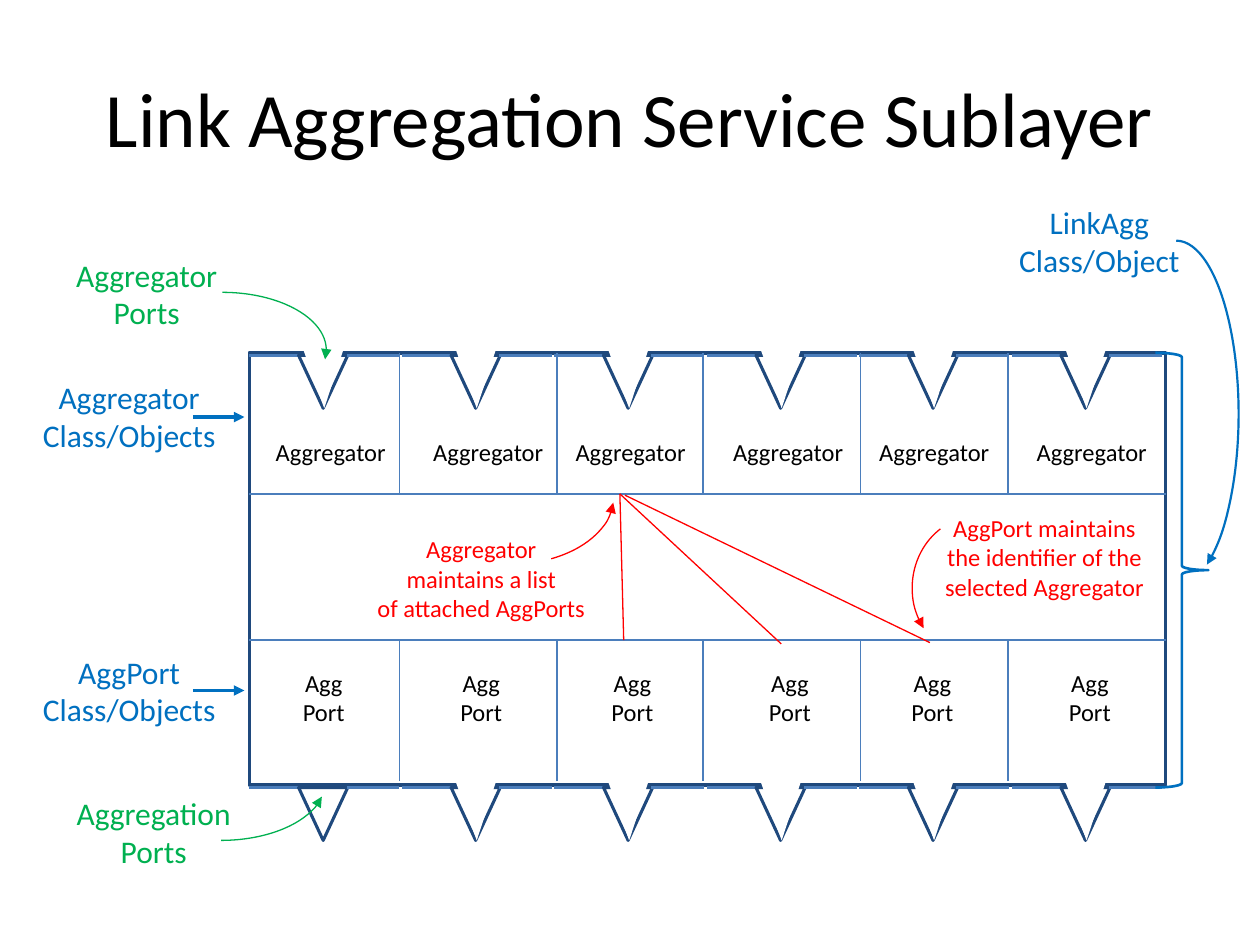
from dataclasses import dataclass

from lxml import etree
from pptx import Presentation
from pptx.dml.color import RGBColor
from pptx.enum.shapes import MSO_CONNECTOR, MSO_SHAPE
from pptx.enum.text import MSO_ANCHOR, MSO_AUTO_SIZE, PP_ALIGN
from pptx.oxml.ns import qn
from pptx.util import Inches, Pt

STRAIGHT = MSO_CONNECTOR.STRAIGHT
RECTANGLE, TRIANGLE = MSO_SHAPE.RECTANGLE, MSO_SHAPE.ISOSCELES_TRIANGLE
ARC, BRACE = MSO_SHAPE.ARC, MSO_SHAPE.RIGHT_BRACE
CENTER, MIDDLE = PP_ALIGN.CENTER, MSO_ANCHOR.MIDDLE
FIT_SHAPE = MSO_AUTO_SIZE.SHAPE_TO_FIT_TEXT


@dataclass(frozen=True)
class Theme:
    font: str = "Calibri"
    title_size: int = 44
    label_size: int = 18
    note_size: int = 14
    black: str = "000000"
    white: str = "FFFFFF"
    navy: str = "1F497D"
    steel: str = "4B7EBC"
    blue: str = "0070C0"
    green: str = "00B050"
    red: str = "FF0000"


THEME = Theme()

LEFT, RIGHT = 1.98, 9.25
TOP, BOTTOM = 2.8, 6.23
AGGREGATOR_FLOOR, AGGPORT_CEILING = 3.92, 5.08
DIVIDERS = [3.17, 4.42, 5.58, 6.83, 8]
AGGREGATOR_LEFTS = [2.08, 3.33, 4.46, 5.71, 6.87, 8.12]
AGGPORT_LEFTS = [2.3, 3.55, 4.75, 6, 7.13, 8.38]
PORT_COUNT, PORT_PITCH = 6, 1.21
PORT_WIDTH, PORT_DEPTH = 0.39, 0.42
AGGREGATOR_PORTS_Y, AGGREGATION_PORTS_Y = 2.82, 6.25


def style_text(frame, size, color):
    for paragraph in frame.paragraphs:
        paragraph.alignment = CENTER
        formats = {"name": THEME.font, "size": Pt(size),
                   "color.rgb": RGBColor.from_string(color)}
        paragraph.font.color.rgb = formats.pop("color.rgb")
        for attribute, value in formats.items():
            setattr(paragraph.font, attribute, value)


def add_label(slide, box, text, size, color, wrap=False):
    frame = slide.shapes.add_textbox(*map(Inches, box)).text_frame
    frame.text = text
    for attribute, value in {"word_wrap": wrap, "auto_size": FIT_SHAPE}.items():
        setattr(frame, attribute, value)
    style_text(frame, size, color)


def style_line(line, color, width, arrow=False):
    line.color.rgb = RGBColor.from_string(color)
    line.width = Pt(width)
    if arrow:
        etree.SubElement(line._get_or_add_ln(), qn("a:tailEnd"), type="triangle")


def add_line(shapes, start, end, color, width=0.75, arrow=False):
    line = shapes.add_connector(STRAIGHT, *map(Inches, (*start, *end)))
    style_line(line.line, color, width, arrow)
    etree.SubElement(line._element.spPr, qn("a:effectLst"))


def add_outline(shapes, kind, box, color, width, arrow=False):
    outline = shapes.add_shape(kind, *map(Inches, box))
    outline.shadow.inherit = False
    outline.fill.background()
    style_line(outline.line, color, width, arrow)
    return outline


def add_mask(shapes, box):
    """White triangle that opens the frame above a port notch."""
    mask = shapes.add_shape(TRIANGLE, *map(Inches, box))
    mask.shadow.inherit = False
    mask.fill.solid()
    mask.fill.fore_color.rgb = RGBColor.from_string(THEME.white)
    mask.line.fill.background()
    mask.adjustments[0] = 0.479
    mask.rotation = 180


def add_arc_arrow(slide, box, angles, color, width=0.75, flip=False, rotation=0):
    """Curved arrow; angles are in units of 5/3 degree, as the preset stores them."""
    arc = add_outline(slide.shapes, ARC, box, color, width, arrow=True)
    for index, angle in enumerate(angles):
        arc.adjustments[index] = angle
    arc.rotation = rotation
    if flip:
        arc._element.spPr.xfrm.set("flipV", "1")


def add_port_row(shapes, y, first_open):
    """Row of V-shaped ports, each between two short edge lines."""
    for index in range(PORT_COUNT):
        start = LEFT + index * PORT_PITCH
        port = start + PORT_WIDTH
        add_line(shapes, (start, y), (port, y), THEME.steel, 2)
        notch = add_outline(shapes, TRIANGLE, (port, y, PORT_WIDTH, PORT_DEPTH),
                            THEME.navy, 1.75)
        notch.rotation = 180
        add_line(shapes, (port + 0.38, y), (port + 0.8, y), THEME.steel, 2)
        if index or first_open:
            add_mask(shapes, (port, y - 0.15, PORT_WIDTH, 0.57))


def add_sublayer(slide):
    shapes = slide.shapes.add_group_shape().shapes
    add_outline(shapes, RECTANGLE, (LEFT, TOP, RIGHT - LEFT, BOTTOM - TOP),
                THEME.navy, 2)
    add_port_row(shapes, AGGREGATION_PORTS_Y, first_open=False)
    add_port_row(shapes, AGGREGATOR_PORTS_Y, first_open=True)


def add_cells(slide):
    for y in (AGGREGATOR_FLOOR, AGGPORT_CEILING):
        add_line(slide.shapes, (LEFT, y), (RIGHT, y), THEME.steel)
    for x in DIVIDERS:
        for low, high in ((AGGREGATOR_FLOOR, TOP), (6.2, AGGPORT_CEILING)):
            add_line(slide.shapes, (x, low), (x, high), THEME.steel)
    for x in AGGREGATOR_LEFTS:
        add_label(slide, (x, 3.42, 1.09, 0.34), "Aggregator",
                  THEME.note_size, THEME.black)
    for x in AGGPORT_LEFTS:
        add_label(slide, (x, 5.25, 0.54, 0.57), "Agg\nPort",
                  THEME.note_size, THEME.black)


def add_callouts(slide):
    for box, text, color in (
        ((0.5, 1.98, 1.33, 0.71), "Aggregator\nPorts", THEME.green),
        ((0.5, 6.25, 1.44, 0.71), "Aggregation\nPorts", THEME.green),
        ((7.98, 1.56, 1.49, 0.71), "LinkAgg\nClass/Object", THEME.blue),
        ((0.23, 2.95, 1.59, 0.71), "Aggregator\nClass/Objects", THEME.blue),
        ((0.23, 5.13, 1.59, 0.71), "AggPort\nClass/Objects", THEME.blue),
    ):
        add_label(slide, box, text, THEME.label_size, color)
    add_arc_arrow(slide, (0.94, 2.32, 1.65, 0.92), (162, 3.031), THEME.green)
    add_arc_arrow(slide, (0.93, 5.75, 1.65, 0.92), (162, 211.177), THEME.green,
                  flip=True)
    add_arc_arrow(slide, (8.84, 1.91, 0.99, 2.75), (162, 47.075), THEME.blue, 1.25)
    add_outline(slide.shapes, BRACE, (9.17, TOP, 0.42, 3.45), THEME.blue, 1.5)
    for y in (3.31, 5.48):
        add_line(slide.shapes, (1.53, y), (1.94, y), THEME.blue, 2, arrow=True)


def add_attachments(slide):
    for start, end in (((4.96, 3.93), (7.38, 5.1)),
                       ((4.92, 3.92), (6.2, 5.11)),
                       ((4.92, 3.92), (4.95, 5.08))):
        add_line(slide.shapes, start, end, THEME.red)
    for box, text in (
        ((2.89, 4.19, 1.86, 0.81), "Aggregator maintains a list\nof attached AggPorts"),
        ((7.36, 4.02, 1.86, 0.81),
         "AggPort maintains the identifier of the selected Aggregator"),
    ):
        add_label(slide, box, text, THEME.note_size, THEME.red, wrap=True)
    add_arc_arrow(slide, (3.22, 3.41, 1.65, 1.07), (182.354, 214.117), THEME.red,
                  flip=True)
    add_arc_arrow(slide, (7.2, 4.13, 1.15, 1.07), (128.174, 183.465), THEME.red,
                  flip=True, rotation=90)


def add_title(slide, text):
    title = slide.shapes.title
    for side, length in {"left": 0.5, "top": 0.3, "width": 9, "height": 1.25}.items():
        setattr(title, side, Inches(length))
    title.text_frame.text = text
    title.text_frame.vertical_anchor = MIDDLE
    style_text(title.text_frame, THEME.title_size, THEME.black)


def main():
    deck = Presentation()
    deck.slide_width, deck.slide_height = Inches(10), Inches(7.5)
    slide = deck.slides.add_slide(deck.slide_layouts.get_by_name("Title Only"))
    add_title(slide, "Link Aggregation Service Sublayer")
    add_sublayer(slide)
    add_cells(slide)
    add_callouts(slide)
    add_attachments(slide)
    deck.save("out.pptx")


if __name__ == "__main__":
    main()
